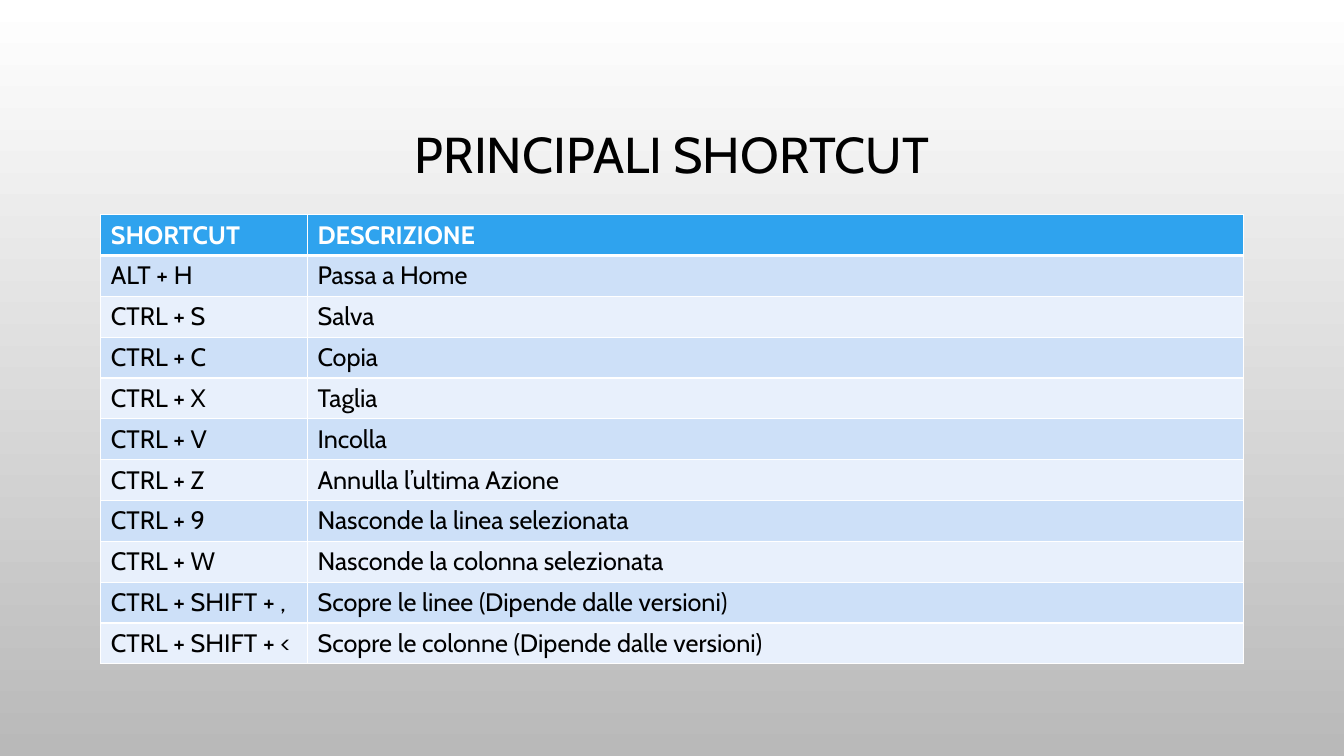
from dataclasses import dataclass

from lxml import etree
from pptx import Presentation
from pptx.dml.color import RGBColor
from pptx.enum import text
from pptx.oxml import ns
from pptx.util import Inches, Pt


@dataclass(frozen=True)
class Theme:
    font: str = "Cabin"
    title_size: int = 36
    table_size: int = 18
    black: str = "000000"
    white: str = "FFFFFF"
    background_end: str = "B9B9B9"
    header: str = "2FA3EE"
    bands: tuple = ("CDE0F8", "E8F0FC")
    thin_border: int = 1
    header_border: int = 3


THEME = Theme()
SHORTCUTS = [
    ("SHORTCUT", "DESCRIZIONE"),
    ("ALT + H", "Passa a Home"),
    ("CTRL + S", "Salva"),
    ("CTRL + C", "Copia"),
    ("CTRL + X", "Taglia"),
    ("CTRL + V", "Incolla"),
    ("CTRL + Z", "Annulla l’ultima Azione"),
    ("CTRL + 9", "Nasconde la linea selezionata"),
    ("CTRL + W", "Nasconde la colonna selezionata"),
    ("CTRL + SHIFT + ,", "Scopre le linee (Dipende dalle versioni)"),
    ("CTRL + SHIFT + <", "Scopre le colonne (Dipende dalle versioni)"),
]


def set_background(slide):
    fill = slide.background.fill
    fill.gradient()
    fill.gradient_angle = 270
    for stop, color in zip(fill.gradient_stops, (THEME.white, THEME.background_end)):
        stop.color.rgb = RGBColor.from_string(color)
    fill.gradient_stops[0].position = 0
    fill.gradient_stops[1].position = 1


def style_text(paragraph, size, color, bold=False):
    for run in paragraph.runs:
        run.font.name = THEME.font
        run.font.size = Pt(size)
        run.font.bold = bold
        run.font.color.rgb = RGBColor.from_string(color)


def add_title(slide, title):
    box = slide.shapes.add_textbox(Inches(1), Inches(0.68), Inches(11.33), Inches(1.75))
    frame = box.text_frame
    frame.word_wrap = True
    frame.vertical_anchor = text.MSO_ANCHOR.MIDDLE
    frame.text = title
    paragraph = frame.paragraphs[0]
    paragraph.alignment = text.PP_ALIGN.CENTER
    paragraph.line_spacing = 0.9
    style_text(paragraph, THEME.title_size, THEME.black)


def set_borders(cell, top, bottom):
    """Draw white borders; must run before the cell fill is set."""
    properties = cell._tc.get_or_add_tcPr()
    widths = {"L": THEME.thin_border, "R": THEME.thin_border, "T": top, "B": bottom}
    for side, width in widths.items():
        line = etree.SubElement(properties, ns.qn(f"a:ln{side}"), w=str(Pt(width)))
        fill = etree.SubElement(line, ns.qn("a:solidFill"))
        etree.SubElement(fill, ns.qn("a:srgbClr"), val=THEME.white)


def fill_cell(cell, content, row):
    is_header = row == 0
    set_borders(
        cell,
        top=THEME.header_border if row == 1 else THEME.thin_border,
        bottom=THEME.header_border if is_header else THEME.thin_border,
    )
    color = THEME.header if is_header else THEME.bands[(row - 1) % 2]
    cell.fill.solid()
    cell.fill.fore_color.rgb = RGBColor.from_string(color)
    cell.text_frame.text = content
    style_text(
        cell.text_frame.paragraphs[0],
        THEME.table_size,
        THEME.white if is_header else THEME.black,
        bold=is_header,
    )


def add_shortcut_table(slide, rows):
    table = slide.shapes.add_table(
        len(rows), 2, Inches(1), Inches(2.13), Inches(11.33), Inches(4.46)
    ).table
    for column, width in zip(table.columns, (2.05, 9.28)):
        column.width = Inches(width)
    for row, contents in enumerate(rows):
        for column, content in enumerate(contents):
            fill_cell(table.cell(row, column), content, row)


def main():
    presentation = Presentation()
    presentation.slide_width = Inches(13.33)
    presentation.slide_height = Inches(7.5)
    slide = presentation.slides.add_slide(presentation.slide_layouts[6])
    set_background(slide)
    add_title(slide, "PRINCIPALI SHORTCUT")
    add_shortcut_table(slide, SHORTCUTS)
    presentation.save("out.pptx")


if __name__ == "__main__":
    main()
